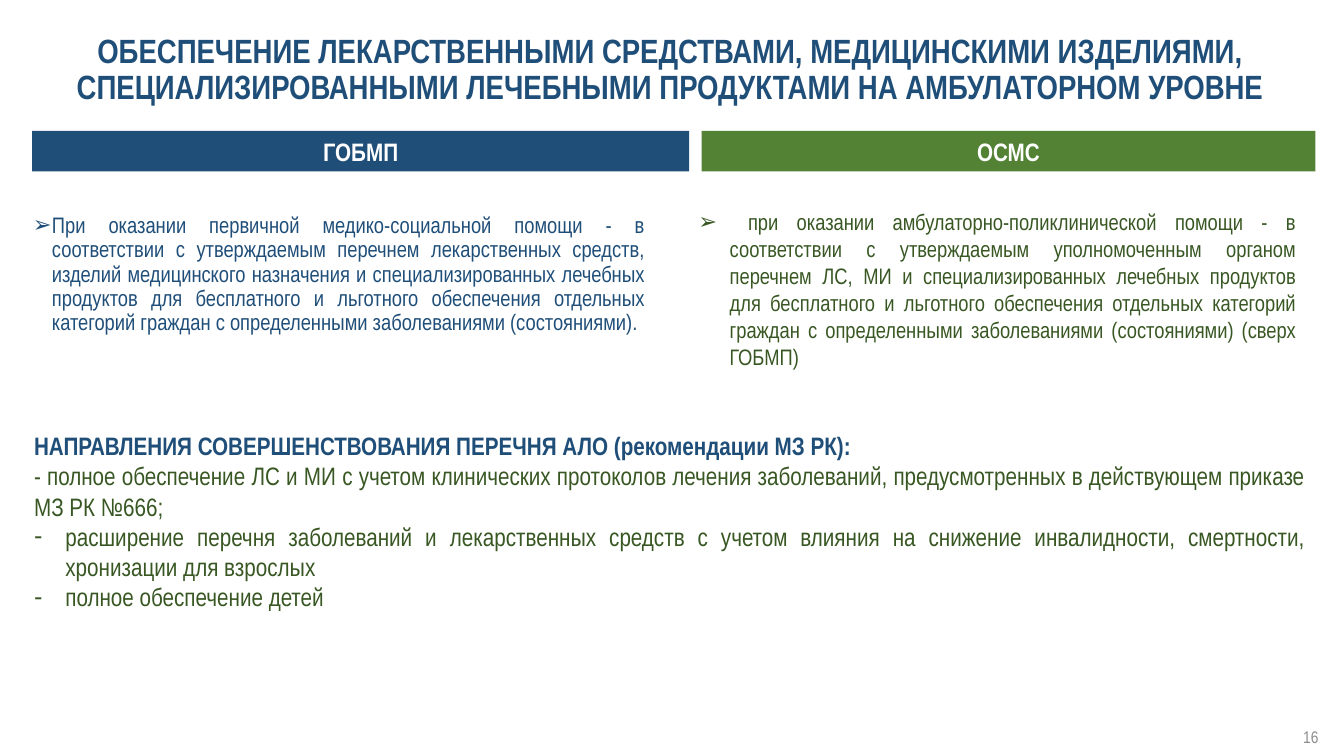
import pptx
import pptx.util
import pptx.dml.color
import pptx.enum.shapes
import pptx.enum.text
import pptx.oxml.ns
import lxml.etree

Cm, Pt = pptx.util.Cm, pptx.util.Pt
ALIGN = pptx.enum.text.PP_ALIGN
ANCHOR = pptx.enum.text.MSO_ANCHOR
AUTO = pptx.enum.text.MSO_AUTO_SIZE
FONT = "Arial Narrow"
BLUE, GREEN, DARK_GREEN = "1F4E79", "548235", "385723"
WHITE, GRAY = "FFFFFF", "8C8C8C"


def rgb(value):
    return pptx.dml.color.RGBColor.from_string(value)


def set_all(obj, values):
    for name, value in values.items():
        setattr(obj, name, value)


def add_bullet(p, char, indent):
    """Hang the paragraph behind a bullet character."""
    pPr = p._p.get_or_add_pPr()
    pPr.set("marL", str(Cm(indent)))
    pPr.set("indent", str(-Cm(indent)))
    qn = pptx.oxml.ns.qn
    lxml.etree.SubElement(pPr, qn("a:buFont")).set("typeface", "Arial")
    lxml.etree.SubElement(pPr, qn("a:buChar")).set("char", char)


def add_paragraph(tf, text, size, color, align, bold=False, spacing=None,
                  bullet=None, indent=0.79):
    p = tf.paragraphs[0]
    if p.runs:
        p = tf.add_paragraph()
    set_all(p, {"alignment": align, "line_spacing": spacing})
    if bullet:
        add_bullet(p, bullet, indent)
    r = p.add_run()
    r.text = text
    set_all(r.font, {"name": FONT, "size": Pt(size), "bold": bold})
    r.font.color.rgb = rgb(color)


def add_text_box(s, box, anchor=ANCHOR.TOP):
    tf = s.shapes.add_textbox(*map(Cm, box)).text_frame
    set_all(tf, {"word_wrap": True, "auto_size": AUTO.NONE,
                 "vertical_anchor": anchor})
    return tf


def add_title(s, box, text):
    tf = add_text_box(s, box, ANCHOR.MIDDLE)
    add_paragraph(tf, text, 24, BLUE, ALIGN.CENTER, bold=True, spacing=0.9)


def add_column(s, box, heading, fill, text_box, text, color, **text_format):
    """Heading bar in the box; text_box is offset from its corner."""
    left, top, width, height = box
    sp = s.shapes.add_shape(pptx.enum.shapes.MSO_SHAPE.RECTANGLE, *map(Cm, box))
    sp.shadow.inherit = False
    sp.fill.solid()
    sp.fill.fore_color.rgb = rgb(fill)
    sp.line.fill.background()
    set_all(sp.text_frame, {"word_wrap": True, "vertical_anchor": ANCHOR.MIDDLE})
    add_paragraph(sp.text_frame, heading, 18, WHITE, ALIGN.CENTER, bold=True)

    dx, dy, text_width, text_height = text_box
    tf = add_text_box(s, (left + dx, top + dy, text_width, text_height))
    add_paragraph(tf, text, 16, color, ALIGN.JUSTIFY, bullet="➢", **text_format)


def add_directions(s, box, heading, items):
    tf = add_text_box(s, box)
    add_paragraph(tf, heading, 18, BLUE, ALIGN.JUSTIFY, bold=True)
    for text, bullet in items:
        add_paragraph(tf, text, 18, DARK_GREEN, ALIGN.JUSTIFY, bullet=bullet)


def add_page_number(s, box, number):
    tf = add_text_box(s, box, ANCHOR.MIDDLE)
    add_paragraph(tf, number, 12, GRAY, ALIGN.RIGHT)


def main():
    prs = pptx.Presentation()
    set_all(prs, {"slide_width": Cm(33.87), "slide_height": Cm(19.05)})
    s = prs.slides.add_slide(prs.slide_layouts[6])

    # Title
    add_title(s, (-0.05, 1.19, 33.87, 1.19),
              "ОБЕСПЕЧЕНИЕ ЛЕКАРСТВЕННЫМИ СРЕДСТВАМИ, МЕДИЦИНСКИМИ ИЗДЕЛИЯМИ, "
              "СПЕЦИАЛИЗИРОВАННЫМИ ЛЕЧЕБНЫМИ ПРОДУКТАМИ НА АМБУЛАТОРНОМ УРОВНЕ")

    # Two care packages side by side
    add_column(s, (0.81, 3.3, 16.56, 1.02), "ГОБМП", BLUE,
               (-0.23, 1.98, 15.93, 4.24),
               "При оказании первичной медико-социальной помощи - в соответствии "
               "с утверждаемым перечнем лекарственных средств, изделий "
               "медицинского назначения и специализированных лечебных продуктов "
               "для бесплатного и льготного обеспечения отдельных категорий "
               "граждан с определенными заболеваниями (состояниями).",
               BLUE, spacing=0.9, indent=0.48)
    add_column(s, (17.68, 3.3, 15.47, 1.02), "ОСМС", GREEN,
               (-0.33, 1.83, 15.57, 4.37),
               " при оказании амбулаторно-поликлинической помощи - в "
               "соответствии с утверждаемым уполномоченным органом перечнем ЛС, "
               "МИ и специализированных лечебных продуктов для бесплатного и "
               "льготного обеспечения отдельных категорий граждан с "
               "определенными заболеваниями (состояниями) (сверх ГОБМП)",
               DARK_GREEN)

    # Directions for improvement
    add_directions(s, (0.61, 10.72, 32.54, 4.88),
                   "НАПРАВЛЕНИЯ СОВЕРШЕНСТВОВАНИЯ ПЕРЕЧНЯ АЛО (рекомендации МЗ РК):",
                   [("- полное обеспечение ЛС и МИ с учетом клинических протоколов "
                     "лечения заболеваний, предусмотренных в действующем приказе "
                     "МЗ РК №666;", None),
                    ("расширение перечня заболеваний и лекарственных средств с "
                     "учетом влияния на снижение инвалидности, смертности, "
                     "хронизации для взрослых", "-"),
                    ("полное обеспечение детей", "-")])

    # Page number
    add_page_number(s, (25.86, 18.06, 7.62, 1.02), "16")

    prs.save("out.pptx")


if __name__ == "__main__":
    main()
